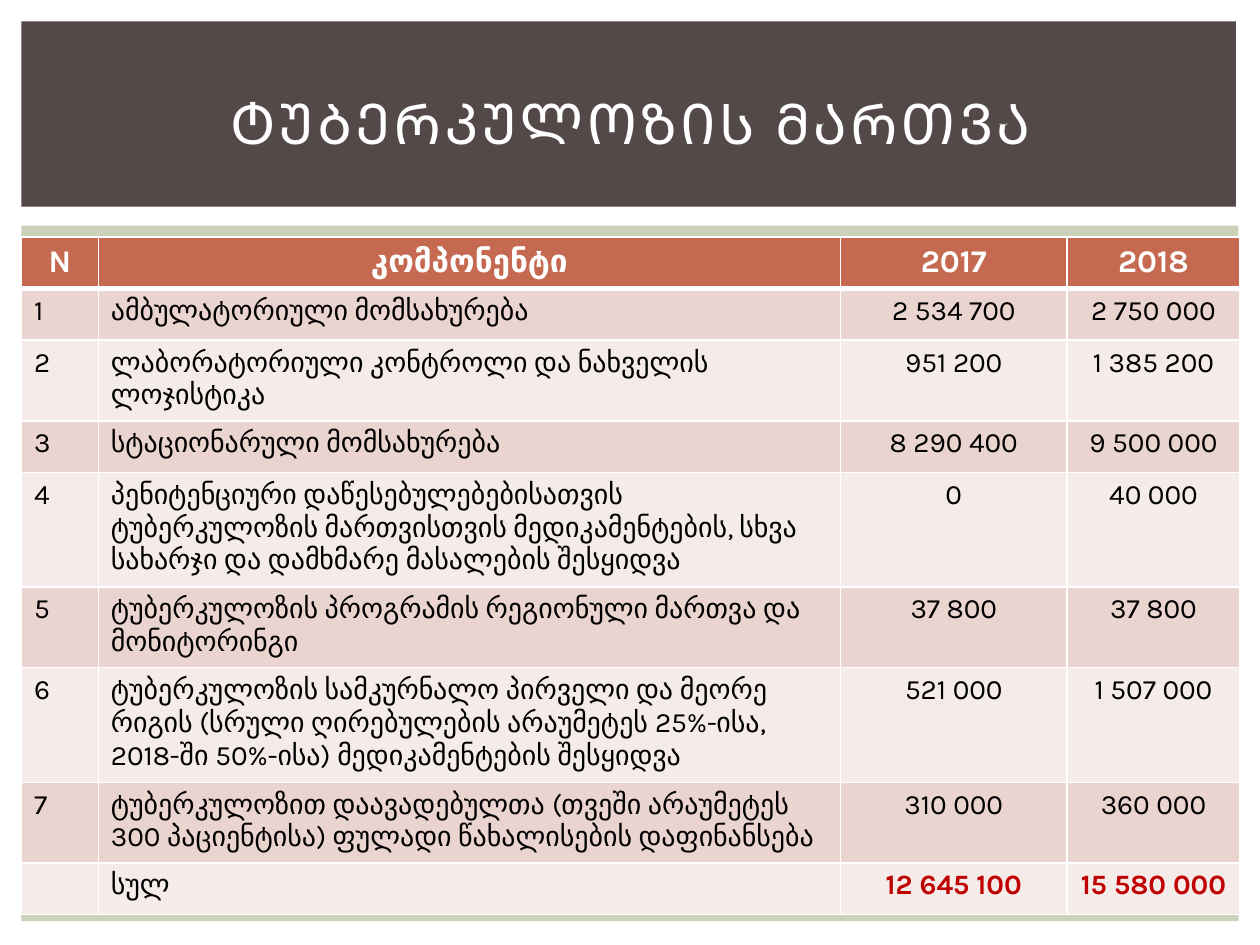
"""Build the tuberculosis management budget slide."""
from dataclasses import dataclass

import pptx
import pptx.dml.color
import pptx.enum.shapes
import pptx.enum.text
import pptx.oxml
import pptx.oxml.ns
import pptx.util

Inches = pptx.util.Inches
Pt = pptx.util.Pt
RGBColor = pptx.dml.color.RGBColor
Align = pptx.enum.text.PP_ALIGN

WHITE = RGBColor(0xFF, 0xFF, 0xFF)
BLACK = RGBColor(0x00, 0x00, 0x00)
SAGE = RGBColor(0xCC, 0xD1, 0xB9)
BROWN = RGBColor(0x53, 0x49, 0x49)
RUST = RGBColor(0xC6, 0x69, 0x51)
BAND_DARK = RGBColor(0xEA, 0xD4, 0xD0)
BAND_LIGHT = RGBColor(0xF5, 0xEB, 0xE9)
RED = RGBColor(0xC0, 0x00, 0x00)

FONT = "Karla"
TITLE_FORMAT = {"name": FONT, "size": Pt(32), "color": WHITE}
HEADER_FORMAT = {"name": FONT, "size": Pt(18), "bold": True, "color": WHITE}
BODY_FORMAT = {"name": FONT, "size": Pt(16), "bold": False, "color": BLACK}
TOTAL_FORMAT = {**BODY_FORMAT, "bold": True, "color": RED}


@dataclass(frozen=True)
class Panel:
    left: float
    top: float
    width: float
    height: float
    color: RGBColor


@dataclass(frozen=True)
class BudgetRow:
    number: str
    component: str
    y2017: str
    y2018: str
    height: float

    def texts(self) -> tuple:
        return self.number, self.component, self.y2017, self.y2018


PANELS = [
    Panel(0.17, 1.79, 9.66, 5.52, SAGE),
    Panel(0.17, 0.17, 9.64, 1.47, BROWN),
]
COLUMN_WIDTHS = [0.61, 5.89, 1.8, 1.37]
ONE_LINE, TWO_LINES, THREE_LINES = 0.41, 0.64, 0.91
ROWS = [
    BudgetRow("N", "კომპონენტი", "2017", "2018", ONE_LINE),
    BudgetRow("1", "ამბულატორიული მომსახურება", "2 534 700", "2 750 000", ONE_LINE),
    BudgetRow("2", "ლაბორატორიული კონტროლი და ნახველის ლოჯისტიკა",
              "951 200", "1 385 200", TWO_LINES),
    BudgetRow("3", "სტაციონარული მომსახურება", "8 290 400", "9 500 000", ONE_LINE),
    BudgetRow("4", "პენიტენციური დაწესებულებებისათვის ტუბერკულოზის მართვისთვის "
              "მედიკამენტების, სხვა სახარჯი და დამხმარე მასალების შესყიდვა",
              "0", "40 000", THREE_LINES),
    BudgetRow("5", "ტუბერკულოზის პროგრამის რეგიონული მართვა და მონიტორინგი",
              "37 800", "37 800", TWO_LINES),
    BudgetRow("6", "ტუბერკულოზის სამკურნალო პირველი და მეორე რიგის (სრული "
              "ღირებულების არაუმეტეს 25%-ისა, 2018-ში 50%-ისა) მედიკამენტების შესყიდვა",
              "521 000", "1 507 000", THREE_LINES),
    BudgetRow("7", "ტუბერკულოზით დაავადებულთა (თვეში არაუმეტეს 300 პაციენტისა) "
              "ფულადი წახალისების დაფინანსება", "310 000", "360 000", TWO_LINES),
    BudgetRow("", "სულ", "12 645 100", "15 580 000", ONE_LINE),
]


def add_text(tf, text: str, fmt: dict, align):
    p = tf.paragraphs[0]
    p.alignment = align
    r = p.add_run()
    r.text = text
    for key, value in fmt.items():
        if key == "color":
            r.font.color.rgb = value
        else:
            setattr(r.font, key, value)
    return r


def add_panel(s, panel: Panel) -> None:
    sp = s.shapes.add_shape(
        pptx.enum.shapes.MSO_SHAPE.RECTANGLE, Inches(panel.left), Inches(panel.top),
        Inches(panel.width), Inches(panel.height))
    sp.shadow.inherit = False
    sp.fill.solid()
    sp.fill.fore_color.rgb = panel.color
    sp.line.fill.background()


def add_title(s, text: str) -> None:
    sp = s.shapes.add_textbox(Inches(0.42), Inches(0.39), Inches(9.17), Inches(1.15))
    tf = sp.text_frame
    tf.word_wrap = True
    tf.vertical_anchor = pptx.enum.text.MSO_ANCHOR.MIDDLE
    r = add_text(tf, text, TITLE_FORMAT, Align.CENTER)
    r.font._element.set("spc", "200")


def set_borders(cell, bottom: float) -> None:
    widths = {"lnL": 1, "lnR": 1, "lnT": 1, "lnB": bottom}
    for i, (tag, width) in enumerate(widths.items()):
        line = pptx.oxml.parse_xml(
            f'<a:{tag} {pptx.oxml.ns.nsdecls("a")} w="{Pt(width)}"><a:solidFill>'
            f'<a:srgbClr val="{WHITE}"/></a:solidFill></a:{tag}>')
        cell._tc.get_or_add_tcPr().insert(i, line)


def cell_format(row: int, col: int) -> dict:
    if row == 0:
        return HEADER_FORMAT
    return TOTAL_FORMAT if row == len(ROWS) - 1 and col >= 2 else BODY_FORMAT


def add_budget_table(s) -> None:
    table = s.shapes.add_table(
        len(ROWS), len(COLUMN_WIDTHS), Inches(0.17), Inches(1.88),
        Inches(sum(COLUMN_WIDTHS)), Inches(sum(row.height for row in ROWS))).table
    for column, width in zip(table.columns, COLUMN_WIDTHS):
        column.width = Inches(width)
    for i, row in enumerate(ROWS):
        table.rows[i].height = Inches(row.height)
        color = RUST if i == 0 else BAND_DARK if i % 2 else BAND_LIGHT
        for j, text in enumerate(row.texts()):
            cell = table.cell(i, j)
            cell.fill.solid()
            cell.fill.fore_color.rgb = color
            set_borders(cell, 3 if i == 0 else 1)
            if text:
                align = Align.CENTER if i == 0 or j >= 2 else Align.LEFT
                add_text(cell.text_frame, text, cell_format(i, j), align)


def main() -> None:
    prs = pptx.Presentation()
    prs.slide_width, prs.slide_height = Inches(10), Inches(7.5)
    s = prs.slides.add_slide(prs.slide_layouts[6])
    for panel in PANELS:
        add_panel(s, panel)
    add_budget_table(s)
    add_title(s, "ᲢᲣᲑᲔᲠᲙᲣᲚᲝᲖᲘᲡ ᲛᲐᲠᲗᲕᲐ")
    prs.save("out.pptx")


if __name__ == "__main__":
    main()
